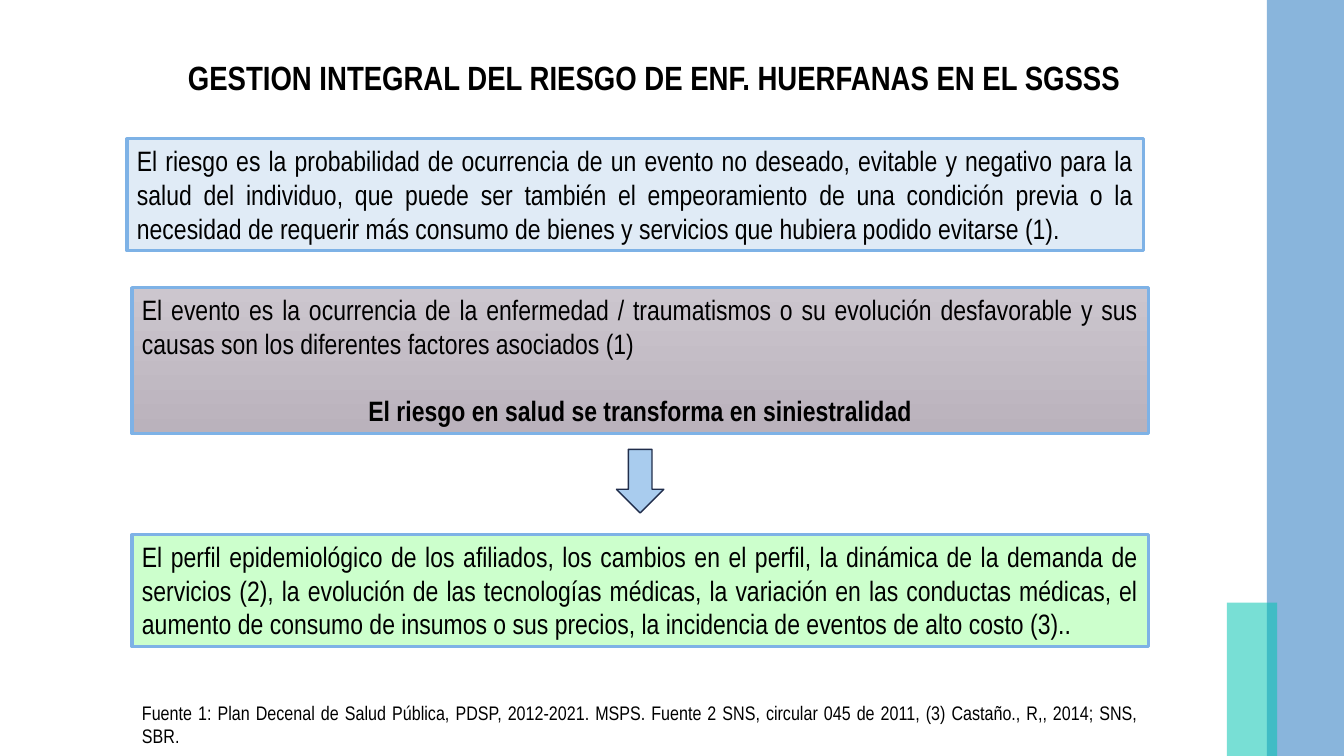
from lxml.etree import SubElement
from pptx import Presentation
from pptx.dml.color import RGBColor
from pptx.enum.shapes import MSO_SHAPE as Preset
from pptx.enum.text import MSO_ANCHOR as Anchor, PP_ALIGN as Align
from pptx.oxml.ns import qn
from pptx.util import Pt

FONT = "Arial Narrow"
BLACK = "000000"
BORDER = "7EB2E6"

TITLE = "GESTION INTEGRAL DEL RIESGO DE ENF. HUERFANAS EN EL SGSSS"
RISK = (
    "El riesgo es la probabilidad de ocurrencia de un evento no deseado, evitable y negativo "
    "para la salud del individuo, que puede ser también el empeoramiento de una condición previa "
    "o la necesidad de requerir más consumo de bienes y servicios que hubiera podido evitarse (1)."
)
EVENT = (
    "El evento es la ocurrencia de la enfermedad / traumatismos o su evolución desfavorable "
    "y sus causas son los diferentes factores asociados (1)"
)
OUTCOME = "El riesgo en salud se transforma en siniestralidad"
PROFILE = (
    "El perfil epidemiológico de los afiliados, los cambios en el perfil, la dinámica de la "
    "demanda de servicios (2), la evolución de las tecnologías médicas, la variación en las "
    "conductas médicas, el aumento de consumo de insumos o sus precios, la incidencia de eventos "
    "de alto costo (3).."
)
SOURCES = (
    "Fuente 1: Plan Decenal de Salud Pública, PDSP, 2012-2021. MSPS. Fuente 2 SNS, circular 045 "
    "de 2011, (3) Castaño., R,, 2014; SNS, SBR."
)

PAGE_WIDTH, PAGE_HEIGHT = 960, 540
LEFT, WIDTH = 94.3, 725.8
BANDS = [
    (905, 0, "629DD1", 75),
    (876.3, 430.4, "00C3B1", 53),
]
BAND_WIDTHS = [55, 36]
PANELS = [
    (90.7, 99.2, 80, ["E0EBF6"], [RISK]),
    (LEFT, 205.4, 104.4, ["CCC6CE", "BAB2BC"], [EVENT, OUTCOME]),
    (LEFT, 382, 80, ["CCFFCC"], [PROFILE]),
]


def color(value):
    return RGBColor.from_string(value)


def write(para, text, size=20, bold=False, align=Align.JUSTIFY, before=0, spacing=1.0):
    para.alignment = align
    para.space_before = Pt(before)
    para.line_spacing = spacing
    span = para.add_run()
    span.text = text
    span.font.name = FONT
    span.font.size = Pt(size)
    span.font.bold = bold
    span.font.color.rgb = color(BLACK)


def add_shape(page, preset, place, fills, line=None, line_width=1, alpha=None):
    shape = page.shapes.add_shape(preset, *map(Pt, place))
    shape.shadow.inherit = False
    if len(fills) == 1:
        shape.fill.solid()
        shape.fill.fore_color.rgb = color(fills[0])
    else:
        shape.fill.gradient()
        shape.fill.gradient_angle = 270
        for stop, value in zip(shape.fill.gradient_stops, fills):
            stop.color.rgb = color(value)
    if alpha:
        tint = next(shape.element.spPr.iter(qn("a:srgbClr")))
        SubElement(tint, qn("a:alpha"), val=str(alpha * 1000))
    if line:
        shape.line.color.rgb = color(line)
        shape.line.width = Pt(line_width)
    else:
        shape.line.fill.background()
    return shape


def main():
    deck = Presentation()
    deck.slide_width, deck.slide_height = Pt(PAGE_WIDTH), Pt(PAGE_HEIGHT)
    page = deck.slides.add_slide(deck.slide_layouts[5])

    for (left, top, fill, alpha), width in zip(BANDS, BAND_WIDTHS):
        place = (left, top, width, PAGE_HEIGHT - top)
        add_shape(page, Preset.RECTANGLE, place, [fill], alpha=alpha)

    title = page.shapes.title
    title.left, title.top, title.width, title.height = map(Pt, (90.7, 36, 753, 41.8))
    title.text_frame.word_wrap = True
    title.text_frame.vertical_anchor = Anchor.MIDDLE
    write(title.text_frame.paragraphs[0], TITLE, size=24, bold=True, align=Align.CENTER, spacing=0.9)

    for left, top, height, fills, texts in PANELS:
        place = (left, top, WIDTH, height)
        panel = add_shape(page, Preset.RECTANGLE, place, fills, line=BORDER, line_width=2.25)
        frame = panel.text_frame
        frame.word_wrap = True
        frame.vertical_anchor = Anchor.TOP
        write(frame.paragraphs[0], texts[0])
        for text in texts[1:]:
            write(frame.add_paragraph(), text, bold=True, align=Align.CENTER, before=24)

    add_shape(page, Preset.DOWN_ARROW, (440.4, 321, 33.8, 45.4), ["A9CCEE"], line="202D4B")

    box = page.shapes.add_textbox(*map(Pt, (LEFT, 496.8, WIDTH, 41)))
    box.text_frame.word_wrap = True
    write(box.text_frame.paragraphs[0], SOURCES, size=14)

    deck.save("out.pptx")


if __name__ == "__main__":
    main()
